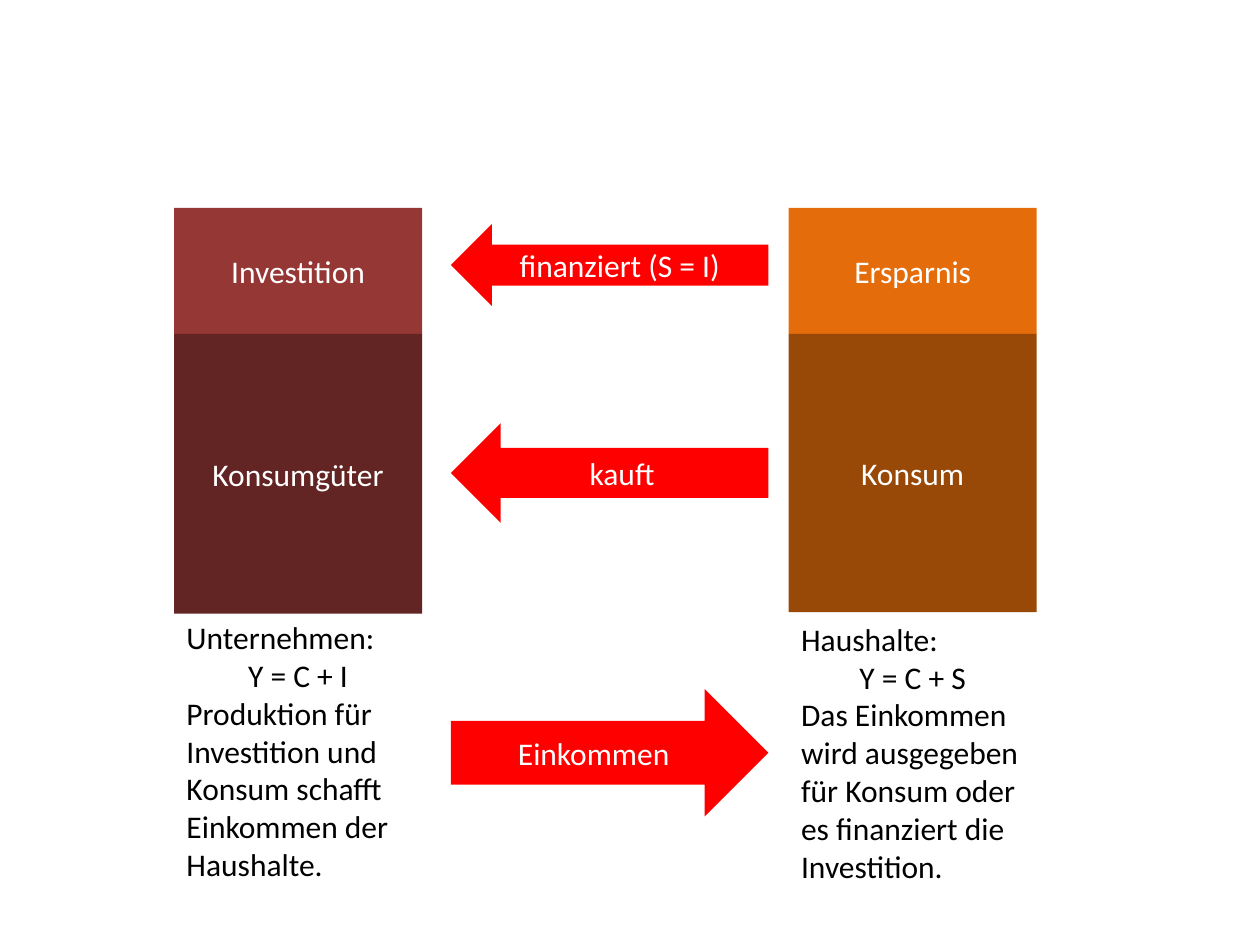
from pptx import Presentation
from pptx.dml.color import RGBColor
from pptx.enum.shapes import MSO_SHAPE
from pptx.enum.text import MSO_ANCHOR, MSO_AUTO_SIZE, PP_ALIGN
from pptx.util import Cm, Pt

RECT, LEFT_ARROW, RIGHT_ARROW = MSO_SHAPE.RECTANGLE, MSO_SHAPE.LEFT_ARROW, MSO_SHAPE.RIGHT_ARROW
LEFT, CENTER = PP_ALIGN.LEFT, PP_ALIGN.CENTER
MIDDLE, FIT_SHAPE = MSO_ANCHOR.MIDDLE, MSO_AUTO_SIZE.SHAPE_TO_FIT_TEXT

WHITE, BLACK = RGBColor(255, 255, 255), RGBColor(0, 0, 0)
RED = RGBColor(0xFF, 0x00, 0x00)
WINE, DARK_WINE = RGBColor(0x95, 0x37, 0x35), RGBColor(0x63, 0x25, 0x23)
ORANGE, BROWN = RGBColor(0xE4, 0x6C, 0x0A), RGBColor(0x98, 0x48, 0x07)

# Content: each column stacks two blocks above an explanation
COLUMNS = [
    {"left": 3.51, "lower_height": 5.64,
     "blocks": [("Investition", WINE), ("Konsumgüter", DARK_WINE)],
     "note_top": 12.34,
     "note": ["Unternehmen:", "Y = C + I",
              "Produktion für Investition und Konsum schafft Einkommen der Haushalte."]},
    {"left": 15.9, "lower_height": 5.61,
     "blocks": [("Ersparnis", ORANGE), ("Konsum", BROWN)],
     "note_top": 12.37,
     "note": ["Haushalte:", "Y = C + S",
              "Das Einkommen wird ausgegeben für Konsum oder es finanziert die Investition."]},
]
# Arrows: text, shape, top, height
ARROWS = [
    ("finanziert (S = I)", LEFT_ARROW, 4.52, 1.65),
    ("kauft", LEFT_ARROW, 8.53, 2.01),
    ("Einkommen", RIGHT_ARROW, 13.89, 2.57),
]

# Layout in centimetres
COLUMN_WIDTH, COLUMN_TOP, UPPER_HEIGHT = 5, 4.19, 2.54
NOTE_HEIGHT = 5.64
ARROW_LEFT, ARROW_WIDTH = 9.09, 6.4
FONT = {"name": "Calibri", "size": Pt(18)}


def write(tf, lines, color):
    """Fill a text frame with (text, alignment) lines."""
    tf.word_wrap = True
    for i, (text, align) in enumerate(lines):
        p = tf.paragraphs[0] if i == 0 else tf.add_paragraph()
        p.alignment = align
        r = p.add_run()
        r.text = text
        r.font.color.rgb = color
        for key, value in FONT.items():
            setattr(r.font, key, value)


def add_block(s, kind, box, text, color):
    sp = s.shapes.add_shape(kind, *map(Cm, box))
    sp.shadow.inherit = False
    sp.fill.solid()
    sp.fill.fore_color.rgb = color
    sp.line.fill.background()
    sp.text_frame.vertical_anchor = MIDDLE
    write(sp.text_frame, [(text, CENTER)], WHITE)


prs = Presentation()
prs.slide_width, prs.slide_height = Cm(25.4), Cm(19.05)
s = prs.slides.add_slide(prs.slide_layouts[6])

# Columns with their explanations
for column in COLUMNS:
    top = COLUMN_TOP
    heights = (UPPER_HEIGHT, column["lower_height"])
    for (text, color), height in zip(column["blocks"], heights):
        add_block(s, RECT, (column["left"], top, COLUMN_WIDTH, height), text, color)
        top += height
    box = (column["left"], column["note_top"], COLUMN_WIDTH, NOTE_HEIGHT)
    tf = s.shapes.add_textbox(*map(Cm, box)).text_frame
    tf.auto_size = FIT_SHAPE
    write(tf, zip(column["note"], (LEFT, CENTER, LEFT)), BLACK)

# Flows between the columns
for text, kind, top, height in ARROWS:
    add_block(s, kind, (ARROW_LEFT, top, ARROW_WIDTH, height), text, RED)

prs.save("out.pptx")
